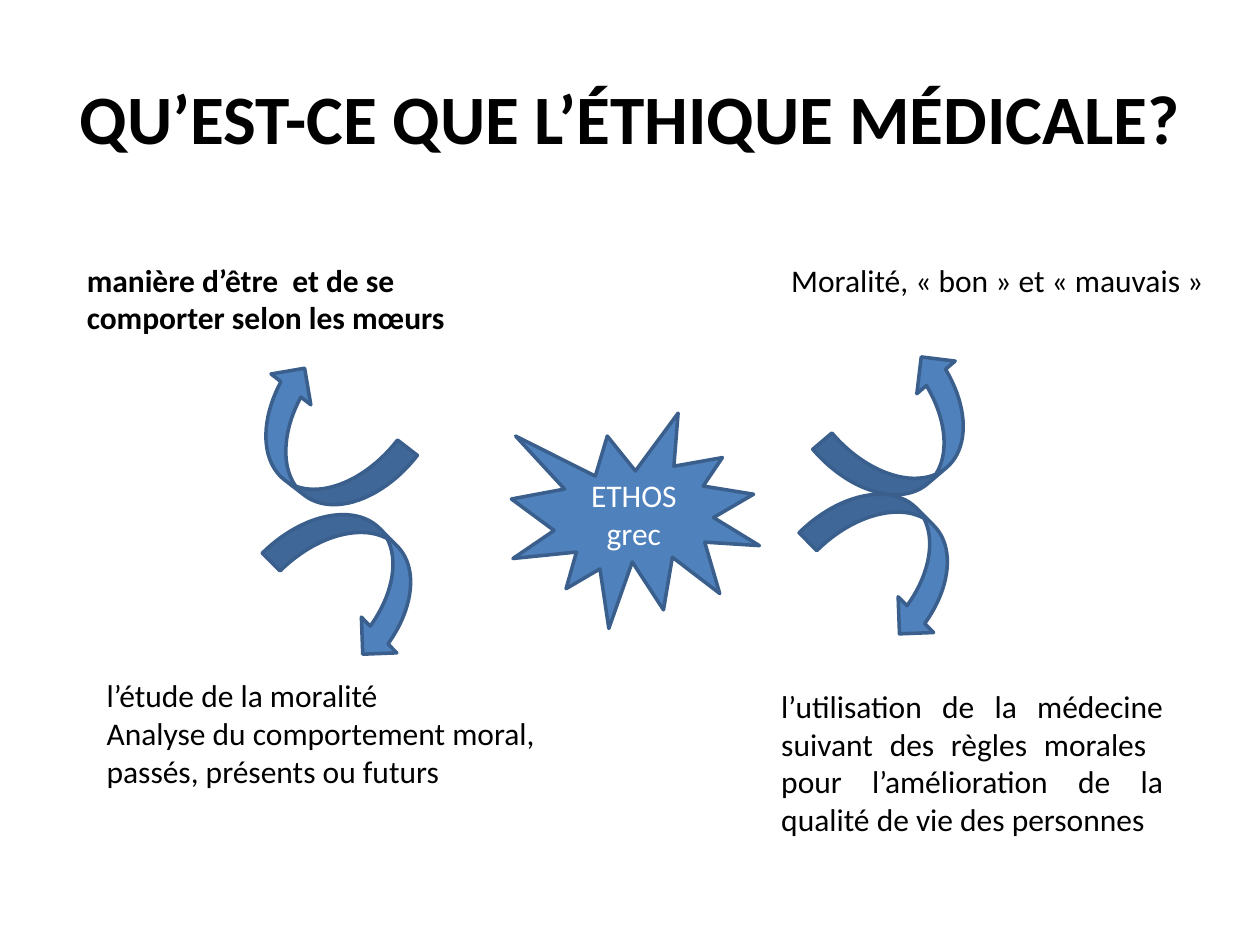
import pptx
import pptx.util
import pptx.dml.color
import pptx.enum.shapes
import pptx.enum.text

Cm = pptx.util.Cm
Pt = pptx.util.Pt
SHAPE = pptx.enum.shapes.MSO_SHAPE
ALIGN = pptx.enum.text.PP_ALIGN
ANCHOR = pptx.enum.text.MSO_ANCHOR
AUTO_SIZE = pptx.enum.text.MSO_AUTO_SIZE

BLACK, WHITE, BLUE, DARK_BLUE = "000000", "FFFFFF", "4F81BD", "3A5F8C"
ARROW_LENGTH, ARROW_DEPTH = 3.38, 2.03


def rgb(color):
    return pptx.dml.color.RGBColor.from_string(color)


def write(tf, lines, size=18, color=BLACK, bold=False, align=ALIGN.LEFT):
    for i, line in enumerate(lines):
        p = tf.paragraphs[0] if i == 0 else tf.add_paragraph()
        p.text = line
        p.alignment = align
        p.font.name = "Calibri"
        p.font.size = Pt(size)
        p.font.bold = bold
        p.font.color.rgb = rgb(color)


def add_title(s, box, text):
    sp = s.shapes.title
    sp.left, sp.top, sp.width, sp.height = map(Cm, box)
    tf = sp.text_frame
    tf.auto_size = AUTO_SIZE.NONE
    tf.vertical_anchor = ANCHOR.MIDDLE
    write(tf, [text], size=39.6, bold=True, align=ALIGN.CENTER)


def add_blue_shape(s, kind, box, rotation=0):
    sp = s.shapes.add_shape(kind, *map(Cm, box))
    sp.rotation = rotation
    sp.shadow.inherit = False
    sp.fill.solid()
    sp.fill.fore_color.rgb = rgb(BLUE)
    sp.line.color.rgb = rgb(DARK_BLUE)
    sp.line.width = Pt(2)
    return sp


def add_burst(s, box, lines):
    tf = add_blue_shape(s, SHAPE.EXPLOSION1, box).text_frame
    tf.vertical_anchor = ANCHOR.MIDDLE
    write(tf, lines, color=WHITE, align=ALIGN.CENTER)


def add_text(s, box, lines, wrap=True, **style):
    tf = s.shapes.add_textbox(*map(Cm, box)).text_frame
    tf.word_wrap = wrap
    tf.auto_size = AUTO_SIZE.SHAPE_TO_FIT_TEXT
    write(tf, lines, **style)


def add_side(s, origin, upper, lower, arrows):
    """Two meanings, one above the other, with the arrows that lead to them.

    Boxes of texts and positions of arrows are relative to the origin.
    """
    left, top = origin

    def place(x, y, w, h):
        return left + x, top + y, w, h

    box, lines, bold = upper
    add_text(s, place(*box), lines, wrap=False, bold=bold)
    box, lines = lower
    add_text(s, place(*box), lines, align=ALIGN.JUSTIFY)
    for kind, x, y, rotation in arrows:
        size = (ARROW_LENGTH, ARROW_DEPTH)
        if kind == SHAPE.CURVED_LEFT_ARROW:
            size = size[::-1]
        add_blue_shape(s, kind, place(x, y, *size), rotation)


def main():
    prs = pptx.Presentation()
    prs.slide_width, prs.slide_height = Cm(25.4), Cm(19.05)
    s = prs.slides.add_slide(prs.slide_layouts[5])

    add_title(s, (1.27, 0.76, 22.86, 3.18), "QU’EST-CE QUE L’ÉTHIQUE MÉDICALE?")
    add_burst(s, (10.31, 8.33, 5, 4.34), ["ETHOS", "grec"])
    add_side(
        s, (1.5, 5.13),
        upper=((0, 0, 7.9, 1.8),
               ["manière d’être  et de se", "comporter selon les mœurs"], True),
        lower=((0.4, 8.38, 10, 3.33),
               ["l’étude de la moralité", "Analyse du comportement moral, ",
                "passés, présents ou futurs"]),
        arrows=[(SHAPE.CURVED_LEFT_ARROW, 3.94, 2.13, 127.7),
                (SHAPE.CURVED_DOWN_ARROW, 4.01, 5.49, 45.2)],
    )
    add_side(
        s, (15.5, 5.13),
        upper=((0.2, 0, 8.94, 1.02), ["Moralité, « bon » et « mauvais »"], False),
        lower=((0, 8.59, 8.2, 3.33),
               ["l’utilisation de la médecine suivant des règles morales  "
                "pour l’amélioration de la qualité de vie des personnes"]),
        arrows=[(SHAPE.CURVED_UP_ARROW, 1.14, 2.59, 319.6),
                (SHAPE.CURVED_DOWN_ARROW, 0.83, 5.08, 45.2)],
    )
    prs.save("out.pptx")


if __name__ == "__main__":
    main()
